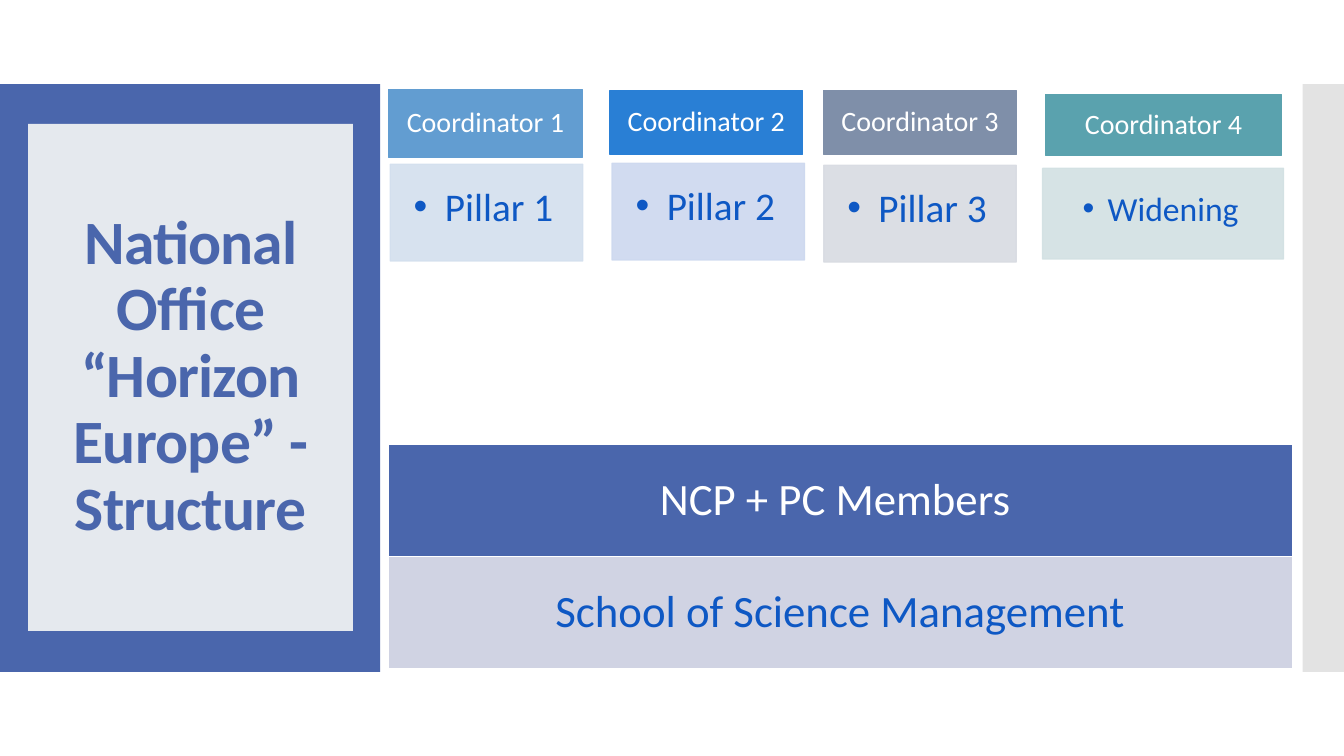
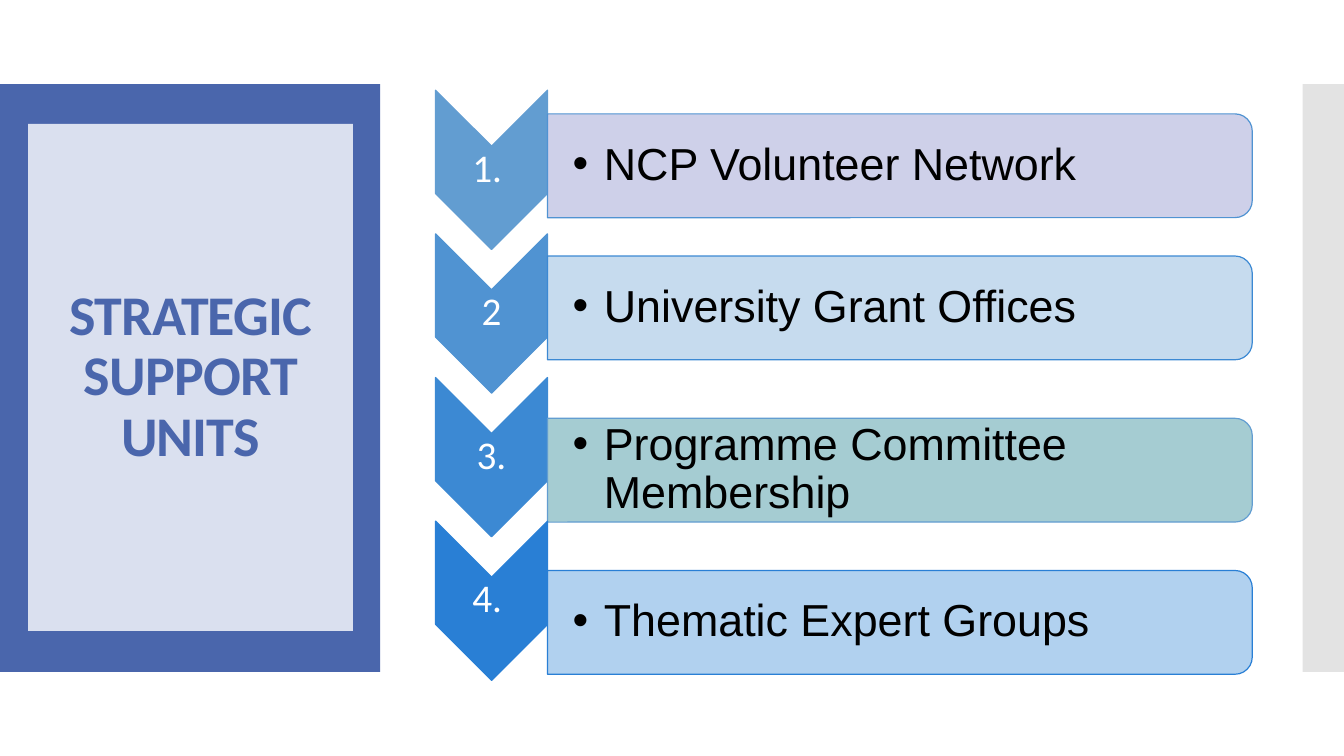
from dataclasses import dataclass

from lxml import etree
from pptx import Presentation
from pptx.dml.color import RGBColor
from pptx.enum.shapes import MSO_SHAPE
from pptx.enum.text import MSO_ANCHOR, MSO_AUTO_SIZE, PP_ALIGN
from pptx.oxml.ns import qn
from pptx.util import Inches, Pt

RECT, CHEVRON, TAB = MSO_SHAPE.RECTANGLE, MSO_SHAPE.CHEVRON, MSO_SHAPE.ROUND_2_SAME_RECTANGLE
LEFT, CENTER = PP_ALIGN.LEFT, PP_ALIGN.CENTER
MIDDLE = MSO_ANCHOR.MIDDLE


@dataclass(frozen=True)
class Theme:
    navy: str = "4A66AC"
    grey: str = "C8C8C8"
    blue_text: str = "0E58C4"
    white: str = "FFFFFF"
    black: str = "000000"
    lavender: str = "D0D3E3"
    font: str = "Calibri"
    list_font: str = "Arial"
    coordinator: int = 20
    step: int = 28
    large: int = 32
    edge: float = 0.85
    tracking: int = -60


THEME = Theme()
SLIDE_W, SLIDE_H = 13.33, 7.5
BAND_TOP, BAND_H = SLIDE_H / 9, SLIDE_H * 7 / 9


def paint(shape, fill, line=None, opacity=100):
    """Fill and outline a shape; opacity applies to everything in the fill colour."""
    shape.shadow.inherit = False
    shape.fill.solid()
    shape.fill.fore_color.rgb = RGBColor.from_string(fill)
    if line:
        shape.line.color.rgb = RGBColor.from_string(line)
        shape.line.width = Pt(THEME.edge)
    else:
        shape.line.fill.background()
    if opacity < 100:
        for colour in shape.element.spPr.iter(qn("a:srgbClr")):
            if colour.get("val") == fill:
                etree.SubElement(colour, qn("a:alpha"), val=str(opacity * 1000))


def write(frame, text, size, colour, font=THEME.font, align=CENTER, spacing=0.9,
          insets=(0.1, 0.05, 0.1, 0.05), bullet_indent=0):
    """Put one run in a middle-anchored frame and return the run."""
    frame.word_wrap = True
    frame.auto_size = MSO_AUTO_SIZE.NONE
    frame.vertical_anchor = MIDDLE
    frame.margin_left, frame.margin_top, frame.margin_right, frame.margin_bottom = map(Inches, insets)
    paragraph = frame.paragraphs[0]
    paragraph.alignment = align
    paragraph.line_spacing = spacing
    if bullet_indent:
        properties = paragraph._p.get_or_add_pPr()
        properties.set("marL", str(Inches(bullet_indent)))
        properties.set("indent", str(-Inches(bullet_indent)))
        etree.SubElement(properties, qn("a:buFont"), typeface=THEME.list_font)
        etree.SubElement(properties, qn("a:buChar"), char="•")
    run = paragraph.add_run()
    run.text = text
    run.font.size = Pt(size)
    run.font.name = font
    run.font.color.rgb = RGBColor.from_string(colour)
    return run


prs = Presentation()
prs.slide_width, prs.slide_height = Inches(SLIDE_W), Inches(SLIDE_H)
title_only = prs.slide_layouts[5]

# Titled slides
slides = []
for heading, size, panel in (
    ("National Office “Horizon Europe” - Structure", 44, "E5E9EE"),
    ("STRATEGIC SUPPORT UNITS", 40, "DAE0EF"),
):
    slide = prs.slides.add_slide(title_only)
    title = slide.shapes.title
    title.left, title.top, title.width, title.height = map(Inches, (0.28, 1.23, 3.22, 5.03))
    title.fill.solid()
    title.fill.fore_color.rgb = RGBColor.from_string(panel)
    run = write(title.text_frame, heading, size, THEME.navy)
    run.font.bold = True
    run._r.get_or_add_rPr().set("spc", str(THEME.tracking))
    slides.append(slide)
structure, support = slides

# Side bands, moved to the layout so that both slides share them
for left, width, colour, opacity in ((0, 3.77, THEME.navy, 100), (12.92, 0.41, THEME.grey, 50)):
    band = structure.shapes.add_shape(RECT, *map(Inches, (left, BAND_TOP, width, BAND_H)))
    paint(band, colour, opacity=opacity)
    title_only.shapes.element.insert(2, band.element)

# Coordinators above their pillars
HEAD_INSETS = (0.16, 0.09, 0.16, 0.09)
PILLAR = (28, (0.16, 0.16, 0.22, 0.24), 0.31)
WIDENING = (24, (0.14, 0.14, 0.19, 0.21), 0.25)
columns = (
    ((3.85, 0.89, 1.93, 0.67), "629DD1", (3.87, 1.63, 1.91, 0.96), "D3DFEE", "Pillar 1", PILLAR),
    ((6.05, 0.9, 1.91, 0.63), "297FD5", (6.07, 1.62, 1.91, 0.96), "CDD8EF", "Pillar 2", PILLAR),
    ((8.17, 0.9, 1.91, 0.63), "7F8FA9", (8.17, 1.64, 1.91, 0.96), "D8DBE2", "Pillar 3", PILLAR),
    ((10.37, 0.94, 2.34, 0.6), "5AA2AE", (10.34, 1.67, 2.39, 0.9), "D2E0E3", "Widening", WIDENING),
)
for number, (head_box, head_fill, area_box, area_fill, area_name, style) in enumerate(columns, 1):
    coordinator = structure.shapes.add_shape(RECT, *map(Inches, head_box))
    paint(coordinator, head_fill, head_fill)
    write(coordinator.text_frame, f"Coordinator {number}", THEME.coordinator, THEME.white,
          insets=HEAD_INSETS)
    area = structure.shapes.add_shape(RECT, *map(Inches, area_box))
    paint(area, area_fill, area_fill, opacity=90)
    size, insets, indent = style
    write(area.text_frame, area_name, size, THEME.blue_text, insets=insets, bullet_indent=indent)

# Members and school
bodies = (
    ("NCP + PC Members ", THEME.navy, THEME.white),
    ("School of Science Management", THEME.lavender, THEME.blue_text),
)
ROW_H = 1.11
body_table = structure.shapes.add_table(
    len(bodies), 1, *map(Inches, (3.85, 4.41, 8.97, ROW_H * len(bodies)))).table
body_table.first_row = body_table.horz_banding = False
for row, (body_name, fill, colour) in enumerate(bodies):
    cell = body_table.cell(row, 0)
    cell.fill.solid()
    cell.fill.fore_color.rgb = RGBColor.from_string(fill)
    cell.vertical_anchor = MIDDLE
    write(cell.text_frame, body_name, THEME.large, colour, spacing=1.0)

# Numbered support units: chevrons at an equal pitch, each with a bar beside it
STEP_TOP, STEP_PITCH = 1.13, 1.425
CHEVRON_W, CHEVRON_H, STEP_LEFT = 1.58, 1.11, 4.32
BAR_LEFT, BAR_W, BAR_H = 5.43, 6.99, 1.03
TEXT_W, TEXT_H = 6.94, 0.93
STEP_INSETS, UNIT_INSETS = (0.02,) * 4, (0.25, 0.02, 0.02, 0.02)
units = (
    ("1. ", "629DD1", "NCP Volunteer Network", "C9CBE7", "5093D2", 1.645),
    ("2", "5093D2", "University Grant Offices", "C0D8ED", "3C89D3", 3.055),
    ("3.", "3C89D3", "Programme Committee Membership", "9CC7CE", "629DD1", 4.665),
    ("4. ", "297FD5", "Thematic Expert Groups", "A9CCEE", "297FD5", 6.175),
)
for index, (number, step_fill, unit_name, bar_fill, bar_line, bar_middle) in enumerate(units):
    step_top = STEP_TOP + index * STEP_PITCH
    step = support.shapes.add_shape(CHEVRON, *map(Inches, (
        STEP_LEFT - (CHEVRON_W - CHEVRON_H) / 2, step_top, CHEVRON_W, CHEVRON_H)))
    step.rotation = 90
    paint(step, step_fill, step_fill)
    step_label = support.shapes.add_textbox(
        *map(Inches, (STEP_LEFT, step_top + 0.31, CHEVRON_H, 0.48)))
    write(step_label.text_frame, number, THEME.step, THEME.white, insets=STEP_INSETS)

    bar = support.shapes.add_shape(TAB, *map(Inches, (
        BAR_LEFT + (BAR_W - BAR_H) / 2, bar_middle - BAR_W / 2, BAR_H, BAR_W)))
    bar.rotation = 90
    paint(bar, bar_fill, bar_line, opacity=90)
    unit = support.shapes.add_textbox(
        *map(Inches, (BAR_LEFT, bar_middle - TEXT_H / 2, TEXT_W, TEXT_H)))
    write(unit.text_frame, unit_name, THEME.large, THEME.black, THEME.list_font, LEFT,
          insets=UNIT_INSETS, bullet_indent=0.31)

prs.save("out.pptx")
